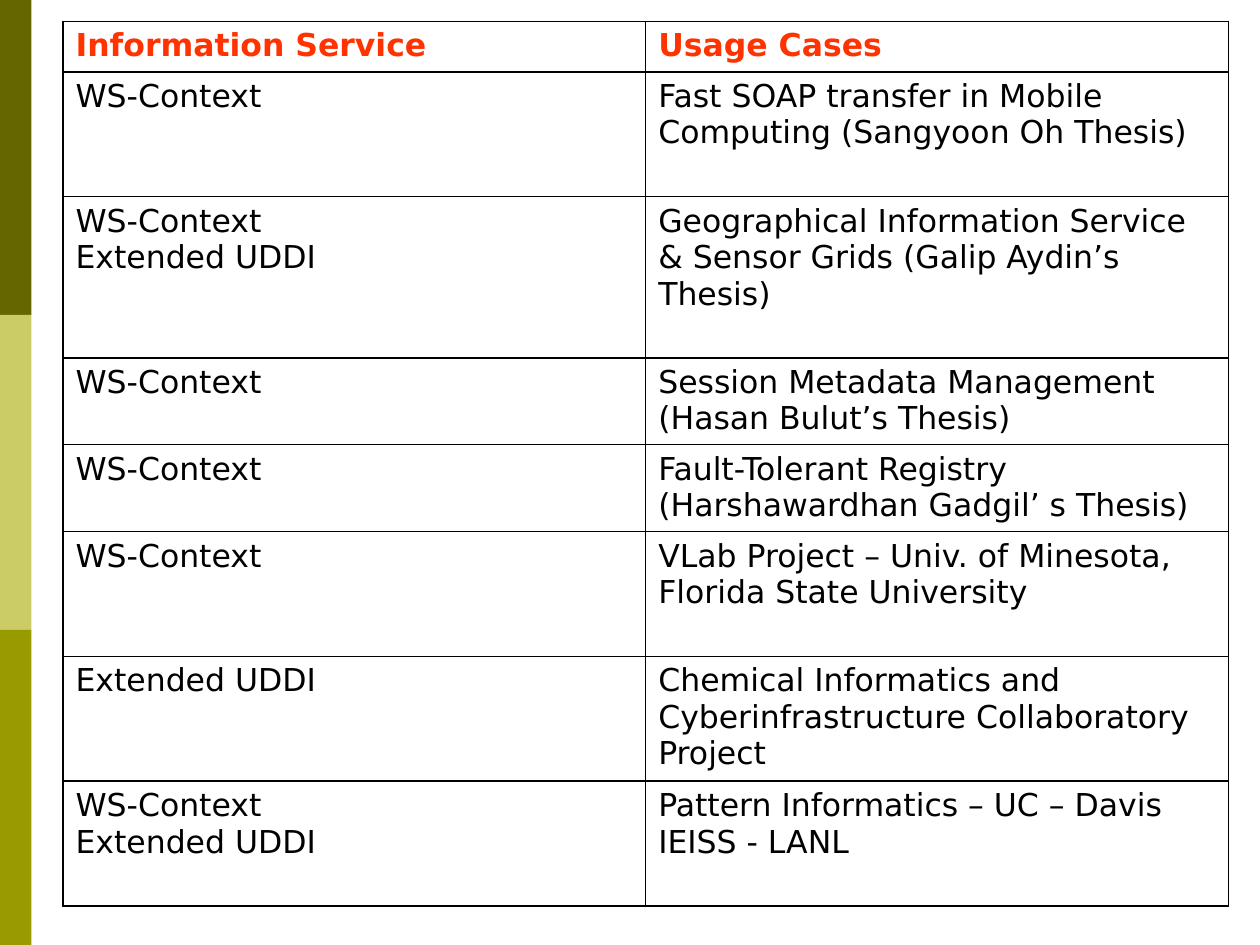
from pptx import Presentation
from pptx.dml.color import RGBColor
from pptx.enum.shapes import MSO_SHAPE as Shape
from pptx.oxml import parse_xml
from pptx.oxml.ns import nsdecls
from pptx.util import Inches, Pt


def color(code):
    return RGBColor.from_string(code)


class Deck:
    font = "DejaVu Sans"
    size = 18
    ink = "000000"
    accent = "FF3300"
    paper = "FFFFFF"

    def __init__(self):
        self.prs = Presentation()
        self.prs.slide_width, self.prs.slide_height = Inches(10), Inches(7.5)
        self.slide = self.prs.slides.add_slide(self.prs.slide_layouts[6])

    def band(self, left, top, width, height, fill):
        box = self.slide.shapes.add_shape(
            Shape.RECTANGLE, Inches(left), Inches(top), Inches(width), Inches(height))
        box.shadow.inherit = False
        box.fill.solid()
        box.fill.fore_color.rgb = color(fill)
        box.line.fill.background()

    def table(self, left, top, width, rows, heights):
        count = len(rows[0])
        grid = self.slide.shapes.add_table(
            len(rows), count, Inches(left), Inches(top),
            Inches(width), Inches(sum(heights))).table
        grid.horz_banding = False
        for col in grid.columns:
            col.width = Inches(width / count)
        for i, (texts, height) in enumerate(zip(rows, heights)):
            grid.rows[i].height = Inches(height)
            for j, text in enumerate(texts):
                self.cell(grid.cell(i, j), text, head=i == 0)

    def cell(self, cell, text, head):
        cell.text_frame.text = text
        for par in cell.text_frame.paragraphs:
            for run in par.runs:
                run.font.name = self.font
                run.font.size = Pt(self.size)
                run.font.bold = head
                run.font.color.rgb = color(self.accent if head else self.ink)
        # Borders must come before the fill in the cell properties
        props = cell._tc.get_or_add_tcPr()
        for side in ("lnL", "lnR", "lnT", "lnB"):
            props.append(parse_xml(
                f'<a:{side} {nsdecls("a")} w="{Pt(1)}"><a:solidFill>'
                f'<a:srgbClr val="{self.ink}"/></a:solidFill></a:{side}>'))
        cell.fill.solid()
        cell.fill.fore_color.rgb = color(self.paper)


def main():
    deck = Deck()

    # Side bands
    for i, fill in enumerate(("666600", "CCCC66", "999900")):
        deck.band(0, 2.5 * i, 0.25, 2.5, fill)

    # Services and where they are used
    ctx, uddi = "WS-Context", "Extended UDDI"
    both = f"{ctx}\n{uddi}"
    rows = [
        ("Information Service", "Usage Cases"),
        (ctx, "Fast SOAP transfer in Mobile Computing (Sangyoon Oh Thesis)"),
        (both, "Geographical Information Service & Sensor Grids (Galip Aydin’s Thesis)"),
        (ctx, "Session Metadata Management (Hasan Bulut’s Thesis)"),
        (ctx, "Fault-Tolerant Registry (Harshawardhan Gadgil’ s Thesis)"),
        (ctx, "VLab Project – Univ. of Minesota, Florida State University"),
        (uddi, "Chemical Informatics and Cyberinfrastructure Collaboratory Project"),
        (both, "Pattern Informatics – UC – Davis\nIEISS - LANL"),
    ]
    heights = [0.4, 0.99, 1.28, 0.69, 0.69, 0.99, 0.99, 0.99]
    deck.table(0.5, 0.17, 9.25, rows, heights)

    deck.prs.save("out.pptx")


if __name__ == "__main__":
    main()
